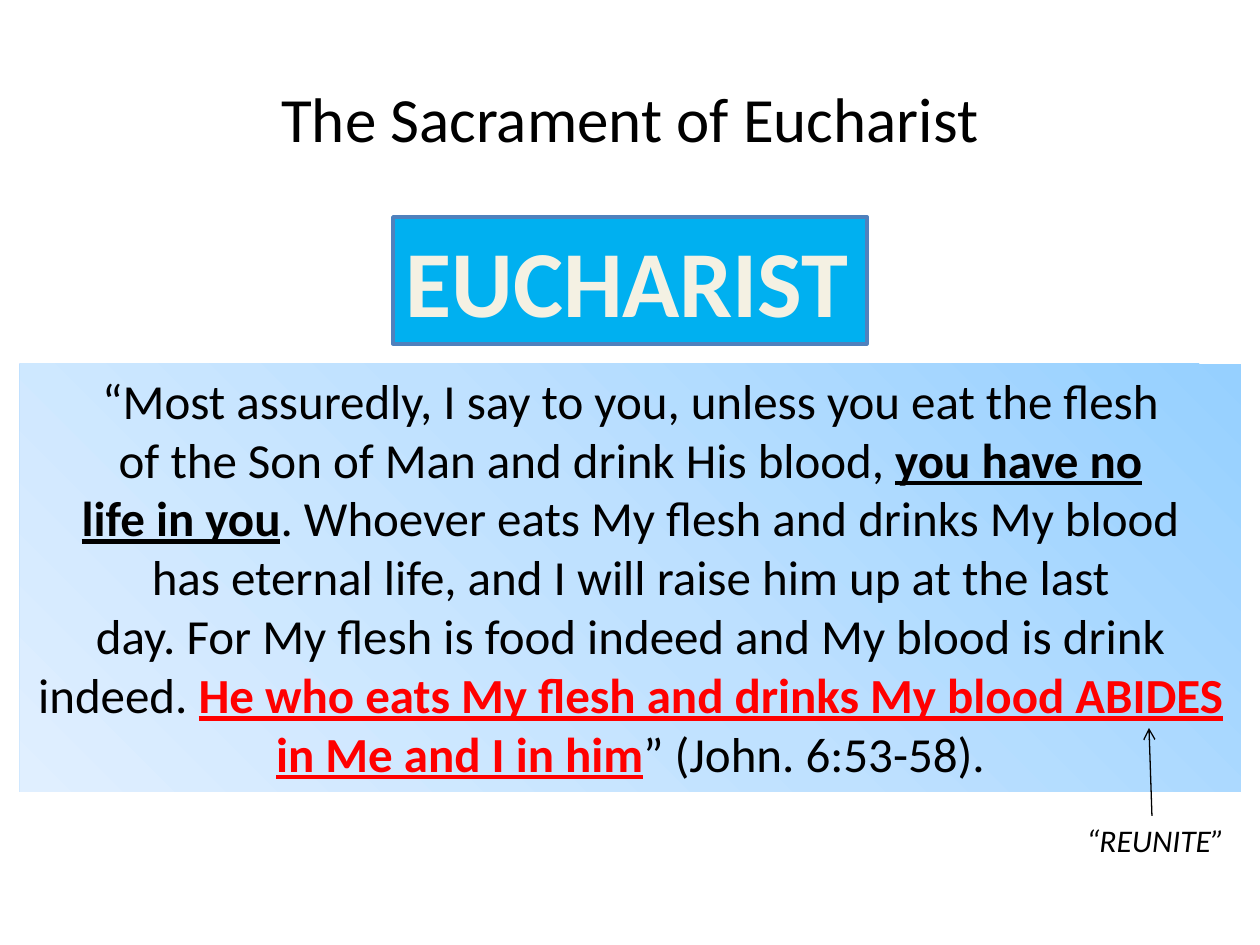
from copy import deepcopy

from pptx import Presentation
from pptx.dml.color import RGBColor
from pptx.enum.shapes import MSO_CONNECTOR as CONNECTOR, MSO_SHAPE as SHAPE
from pptx.enum.text import MSO_ANCHOR as ANCHOR, MSO_AUTO_SIZE as AUTO, PP_ALIGN as ALIGN
from pptx.oxml.ns import qn
from pptx.util import Emu, Pt

PX_PER_INCH = 126
BLACK = RGBColor(0x00, 0x00, 0x00)
RED = RGBColor(0xFF, 0x00, 0x00)
CREAM = RGBColor(0xF4, 0xF1, 0xE3)
SKY = RGBColor(0x00, 0xB0, 0xF0)
STEEL = RGBColor(0x4F, 0x81, 0xBD)
GRADIENT = [RGBColor(0x96, 0xD0, 0xFF), RGBColor(0xBF, 0xE1, 0xFF), RGBColor(0xE0, 0xEF, 0xFF)]

PLAIN = {"size": Pt(28), "color": BLACK}
STRONG = PLAIN | {"bold": True, "underline": True}
KEY = STRONG | {"color": RED}
VERSE = [
    [("“Most assuredly, I say to you, unless you eat the flesh", PLAIN)],
    [("of the Son of Man and drink His blood, ", PLAIN), ("you have no", STRONG)],
    [("life in you", STRONG), (". Whoever eats My flesh and drinks My blood", PLAIN)],
    [("has eternal life, and I will raise him up at the last", PLAIN)],
    [("day. For My flesh is food indeed and My blood is drink indeed. ", PLAIN),
     ("He who eats My flesh and drinks My blood ABIDES", KEY)],
    [("in Me and I in him", KEY), ("” (John. 6:53-58).", PLAIN)],
]


def px(*lengths):
    return [Emu(round(length * 914400 / PX_PER_INCH)) for length in lengths]


def write(shape, lines, align, wrap=True, anchor=ANCHOR.TOP, auto_size=AUTO.SHAPE_TO_FIT_TEXT):
    frame = shape.text_frame
    settings = {"word_wrap": wrap, "vertical_anchor": anchor, "auto_size": auto_size}
    for name, value in settings.items():
        setattr(frame, name, value)
    for index, line in enumerate(lines):
        para = frame.add_paragraph() if index else frame.paragraphs[0]
        para.alignment = align
        for text, style in line:
            span = para.add_run()
            span.text = text
            span.font.name = "Calibri"
            for name, value in style.items():
                if name == "color":
                    span.font.color.rgb = value
                else:
                    setattr(span.font, name, value)


def add_title(page, box):
    title = page.shapes.title
    title.left, title.top, title.width, title.height = px(*box)
    style = {"size": Pt(36), "color": BLACK}
    write(title, [[("The Sacrament of Eucharist", style)]], ALIGN.CENTER,
          anchor=ANCHOR.MIDDLE, auto_size=AUTO.NONE)


def add_banner(page, box):
    banner = page.shapes.add_shape(SHAPE.RECTANGLE, *px(*box))
    banner.shadow.inherit = False
    banner.fill.solid()
    banner.fill.fore_color.rgb = SKY
    banner.line.color.rgb = STEEL
    banner.line.width = Pt(2)
    style = {"size": Pt(54), "bold": True, "color": CREAM}
    write(banner, [[("EUCHARIST", style)]], ALIGN.LEFT, wrap=False)


def add_verse(page, box):
    panel = page.shapes.add_shape(SHAPE.RECTANGLE, *px(*box))
    panel.shadow.inherit = False
    panel.line.fill.background()
    # Three evenly spaced stops, from top right to bottom left
    panel.fill.gradient()
    panel.fill.gradient_angle = 225
    stop_list = panel.element.spPr.find(qn("a:gradFill")).find(qn("a:gsLst"))
    stop_list.append(deepcopy(stop_list[0]))
    for index, (stop, color) in enumerate(zip(panel.fill.gradient_stops, GRADIENT)):
        stop.position = index / (len(GRADIENT) - 1)
        stop.color.rgb = color
    write(panel, VERSE, ALIGN.CENTER)


def add_note(page, box):
    left, top, width, height = box
    note = page.shapes.add_textbox(*px(*box))
    style = {"size": Pt(18), "italic": True, "color": BLACK}
    write(note, [[("“REUNITE”", style)]], ALIGN.LEFT, wrap=False)
    # Arrow up to the word it explains
    arrow = page.shapes.add_connector(
        CONNECTOR.STRAIGHT, *px(left + 78, top + 1, left + 75, top - 87))
    arrow.line.color.rgb = BLACK
    arrow.line.width = Pt(0.75)
    properties = arrow.element.spPr
    line = properties.find(qn("a:ln"))
    line.append(line.makeelement(qn("a:tailEnd"), {"type": "arrow"}))
    properties.append(properties.makeelement(qn("a:effectLst"), {}))


def main():
    deck = Presentation()
    deck.slide_width, deck.slide_height = px(1260, 945)
    page = deck.slides.add_slide(deck.slide_layouts[5])
    add_title(page, (63, 38, 1134, 158))
    add_banner(page, (393, 217, 474, 127))
    add_verse(page, (20, 364, 1221, 428))
    add_note(page, (1074, 815, 164, 50))
    deck.save("out.pptx")


if __name__ == "__main__":
    main()
